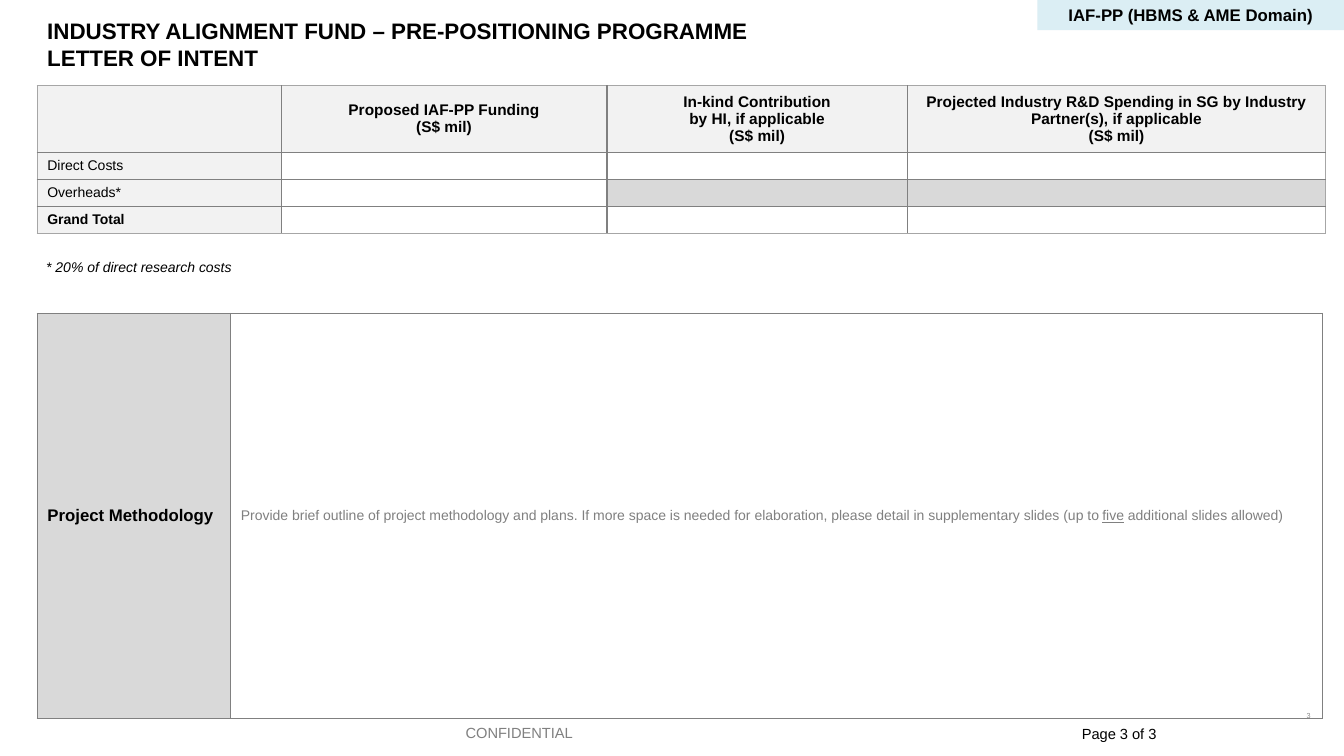
"""Build the letter of intent slide with its funding and methodology tables."""
from lxml.etree import SubElement
from pptx import Presentation
from pptx.dml.color import RGBColor
from pptx.enum.shapes import MSO_SHAPE
from pptx.enum.text import MSO_ANCHOR, PP_ALIGN
from pptx.oxml.ns import qn
from pptx.util import Inches, Pt

COLORS = {"black": "000000", "gray": "808080", "edge": "A6A6A6", "number": "8C8C8C",
          "head": "F2F2F2", "shade": "D9D9D9", "tag": "DBEEF4"}


def write(tf, text, size=10, color="black", align=PP_ALIGN.LEFT, bold=False, italic=False):
    """Write one paragraph per line; words between underscores are underlined."""
    tf.word_wrap = True
    for n, line in enumerate(text.split("\n")):
        p = tf.add_paragraph() if n else tf.paragraphs[0]
        p.alignment = align
        for i, part in enumerate(line.split("_")):
            if not part:
                SubElement(p._p, qn("a:endParaRPr"), sz=str(size * 100))
                continue
            r = p.add_run()
            r.text = part
            r.font.name, r.font.size = "Arial", Pt(size)
            r.font.bold, r.font.italic, r.font.underline = bold, italic, i % 2 == 1
            r.font.color.rgb = RGBColor.from_string(COLORS[color])


def add_grid(s, left, top, widths, heights, cells, edge):
    """Add a table whose cells are (text, fill, text format) tuples."""
    rows, cols = len(heights), len(widths)
    table = s.shapes.add_table(rows, cols, Inches(left), Inches(top),
                               Inches(sum(widths)), Inches(sum(heights))).table
    table.first_row = table.horz_banding = False
    for col, width in zip(table.columns, widths):
        col.width = Inches(width)
    for y, height in enumerate(heights):
        table.rows[y].height = Inches(height)
        for x, (text, fill, style) in enumerate(cells[y]):
            cell = table.cell(y, x)
            cell.vertical_anchor = MSO_ANCHOR.MIDDLE
            write(cell.text_frame, text, **style)
            tc_pr = cell._tc.get_or_add_tcPr()
            outer = {"L": x == 0, "R": x == cols - 1, "T": y == 0, "B": y == rows - 1}
            for side, is_outer in outer.items():
                ln = SubElement(tc_pr, qn(f"a:ln{side}"), w=str(Pt(1)))
                color = COLORS[edge if is_outer else "gray"]
                SubElement(SubElement(ln, qn("a:solidFill")), qn("a:srgbClr"), val=color)
            if fill:
                cell.fill.solid()
                cell.fill.fore_color.rgb = RGBColor.from_string(COLORS[fill])
            else:
                cell.fill.background()


prs = Presentation()
prs.slide_width, prs.slide_height = Inches(13.33), Inches(7.5)
s = prs.slides.add_slide(prs.slide_layouts[6])

number = s.shapes.add_textbox(Inches(9.96), Inches(6.9), Inches(3.11), Inches(0.4))
tf = number.text_frame
tf.margin_left = tf.margin_right = Inches(0.07)
tf.margin_top = tf.margin_bottom = Inches(0.04)
tf.vertical_anchor = MSO_ANCHOR.MIDDLE
write(tf, "3", size=5.2, color="number", align=PP_ALIGN.RIGHT)

prompt = ("Provide brief outline of project methodology and plans. If more space is needed for "
          "elaboration, please detail in supplementary slides (up to _five_ additional slides allowed)")
add_grid(s, 0.37, 3.11, [1.92, 10.83], [4.02],
         [[("Project Methodology", "shade", {"size": 12, "bold": True}),
           (prompt, None, {"color": "gray"})]], "gray")

head = {"size": 11, "bold": True, "align": PP_ALIGN.CENTER}
headings = ["", "Proposed IAF-PP Funding\n(S$ mil)",
            "In-kind Contribution\nby HI, if applicable\n(S$ mil)",
            "Projected Industry R&D Spending in SG by Industry Partner(s), if applicable\n(S$ mil)"]
costs = [[(text, "head", head) for text in headings]]
for label, fills, bold in [("Direct Costs", [None] * 3, False),
                           ("Overheads*", [None, "shade", "shade"], False),
                           ("Grand Total", [None] * 3, True)]:
    costs.append([(label, "head", {"bold": bold})] + [("", fill, {}) for fill in fills])
add_grid(s, 0.37, 0.85, [2.42, 3.23, 2.98, 4.15], [0.66] + [0.27] * 3, costs, "edge")

title = "INDUSTRY ALIGNMENT FUND – PRE-POSITIONING PROGRAMME\nLETTER OF INTENT"
for left, top, width, height, text, style in [
    (0.37, 0.12, 9.61, 0.6, title, {"size": 16, "bold": True}),
    (10.07, 7.14, 1.5, 0.29, "Page 3 of 3", {"size": 10.5, "align": PP_ALIGN.RIGHT}),
    (0.36, 2.52, 2.05, 0.27, "* 20% of direct research costs", {"italic": True}),
    (4.4, 7.13, 1.5, 0.29, "CONFIDENTIAL",
     {"size": 10.5, "color": "gray", "align": PP_ALIGN.CENTER}),
]:
    box = s.shapes.add_textbox(Inches(left), Inches(top), Inches(width), Inches(height))
    write(box.text_frame, text, **style)

tag = s.shapes.add_shape(MSO_SHAPE.RECTANGLE, Inches(10.29), 0, Inches(3.04), Inches(0.3))
tag.shadow.inherit = False
tag.fill.solid()
tag.fill.fore_color.rgb = RGBColor.from_string(COLORS["tag"])
tag.line.fill.background()
tag.text_frame.vertical_anchor = MSO_ANCHOR.TOP
write(tag.text_frame, "IAF-PP (HBMS & AME Domain)", size=12, bold=True, align=PP_ALIGN.CENTER)

prs.save("out.pptx")
